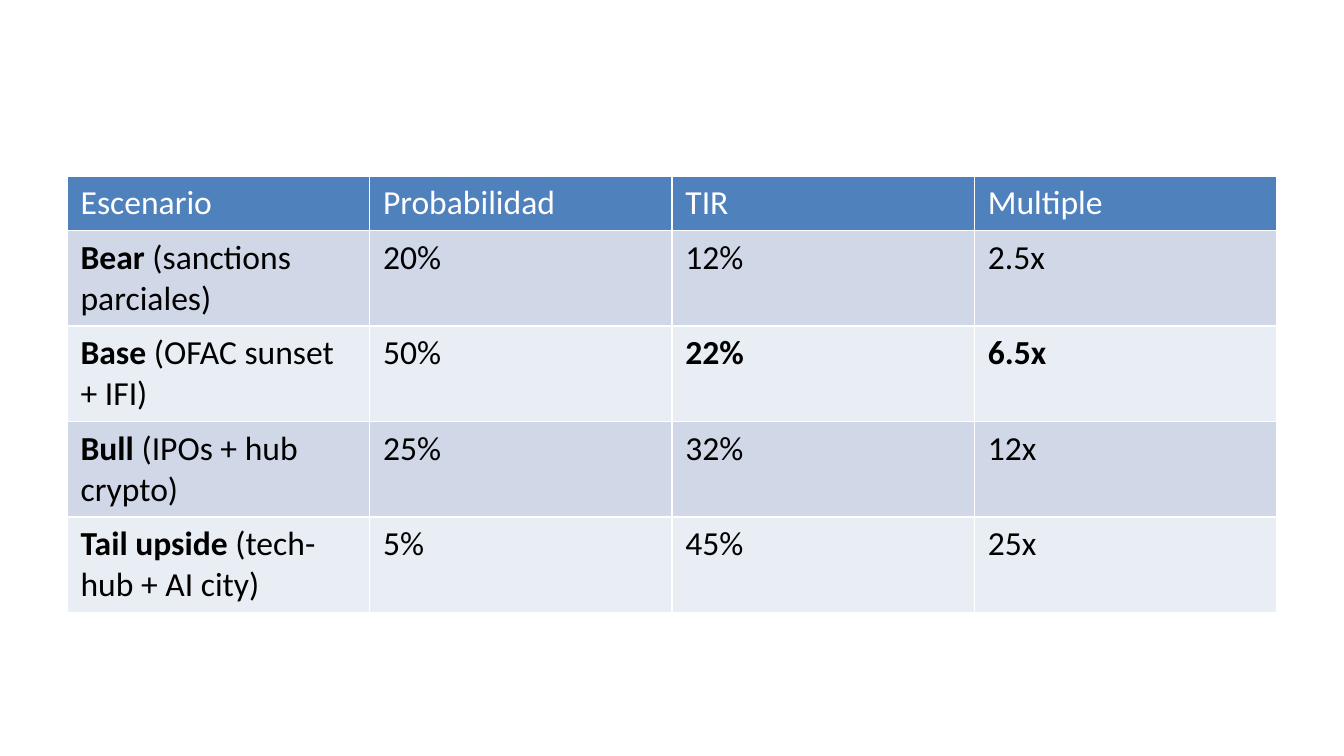
import dataclasses

import pptx
import pptx.dml.color
import pptx.table
import pptx.util

Inches = pptx.util.Inches
RGBColor = pptx.dml.color.RGBColor

WHITE = RGBColor(0xFF, 0xFF, 0xFF)
BLACK = RGBColor(0x00, 0x00, 0x00)
BLUE = RGBColor(0x4F, 0x81, 0xBD)
BANDS = (RGBColor(0xD0, 0xD8, 0xE8), RGBColor(0xE9, 0xED, 0xF4))

HEADS = ("Escenario", "Probabilidad", "TIR", "Multiple")
HEAD_H, ROW_H = 0.4, 0.71


@dataclasses.dataclass(frozen=True)
class Case:
    name: str
    note: str
    odds: str
    rate: str
    gain: str
    key: bool = False


CASES = (
    Case("Bear", " (sanctions parciales)", "20%", "12%", "2.5x"),
    Case("Base", " (OFAC sunset + IFI)", "50%", "22%", "6.5x", key=True),
    Case("Bull", " (IPOs + hub crypto)", "25%", "32%", "12x"),
    Case("Tail upside", " (tech-hub + AI city)", "5%", "45%", "25x"),
)


def write(cell: pptx.table._Cell, text: str, *, color: RGBColor = BLACK,
          bold: bool = False, size: float = 18, face: str = "Calibri") -> None:
    """Append one formatted run to a cell."""
    run = cell.text_frame.paragraphs[0].add_run()
    run.text = text
    run.font.name = face
    run.font.size = pptx.util.Pt(size)
    run.font.bold = bold
    run.font.color.rgb = color


def paint(row: pptx.table._Row, color: RGBColor, height: float) -> None:
    """Set the height and the fill of a whole row."""
    row.height = Inches(height)
    for cell in row.cells:
        cell.fill.solid()
        cell.fill.fore_color.rgb = color


def fill_case(row: pptx.table._Row, case: Case) -> None:
    """Write one scenario: bold name, plain note, then its figures."""
    label, odds, rate, gain = row.cells
    write(label, case.name, bold=True)
    write(label, case.note)
    write(odds, case.odds)
    write(rate, case.rate, bold=case.key)
    write(gain, case.gain, bold=case.key)


def main() -> None:
    # Widescreen slide, 16:9
    deck = pptx.Presentation()
    deck.slide_width = Inches(10)
    deck.slide_height = Inches(10 * 9 / 16)
    slide = deck.slides.add_slide(deck.slide_layouts[6])

    # Scenario table; the default style supplies the white rules
    high = HEAD_H + ROW_H * len(CASES)
    grid = slide.shapes.add_table(
        len(CASES) + 1, len(HEADS),
        Inches(0.5), Inches(1.31), Inches(9), Inches(high)).table

    # Header row
    paint(grid.rows[0], BLUE, HEAD_H)
    for cell, head in zip(grid.rows[0].cells, HEADS):
        write(cell, head, color=WHITE)

    # Banded scenario rows
    for i, case in enumerate(CASES):
        row = grid.rows[i + 1]
        paint(row, BANDS[i % 2], ROW_H)
        fill_case(row, case)

    deck.save("out.pptx")


if __name__ == "__main__":
    main()
